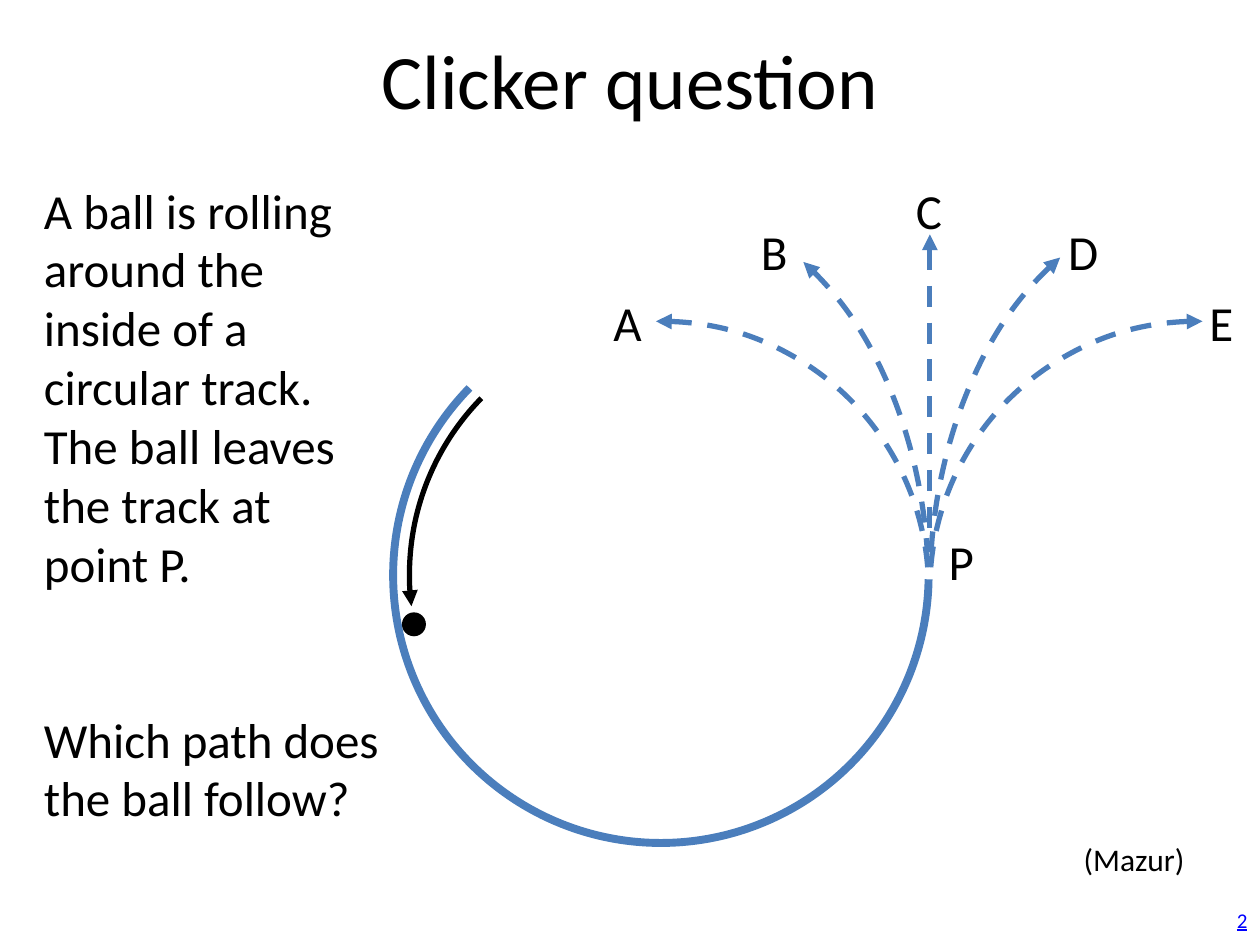
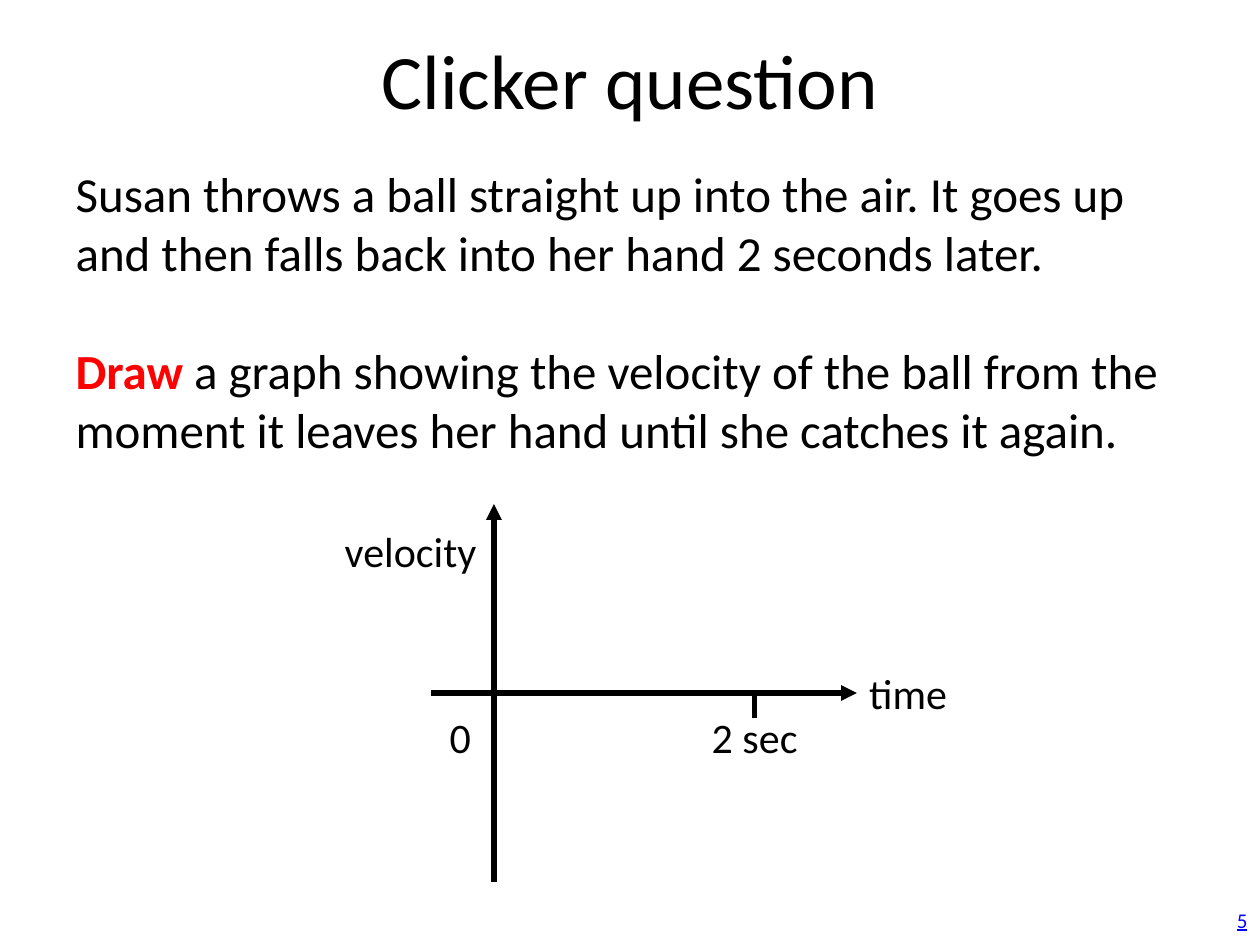
from pptx import Presentation
from pptx.dml.color import RGBColor
from pptx.enum.dml import MSO_LINE
from pptx.enum.shapes import MSO_CONNECTOR, MSO_SHAPE
from pptx.enum.text import MSO_ANCHOR, MSO_AUTO_SIZE, PP_ALIGN
from pptx.oxml.ns import qn
from pptx.util import Inches, Pt
from lxml import etree

LEFT, CENTER, RIGHT = PP_ALIGN.LEFT, PP_ALIGN.CENTER, PP_ALIGN.RIGHT
TOP, MIDDLE = MSO_ANCHOR.TOP, MSO_ANCHOR.MIDDLE
FIT, FIXED = MSO_AUTO_SIZE.SHAPE_TO_FIT_TEXT, MSO_AUTO_SIZE.NONE
ARC, OVAL = MSO_SHAPE.ARC, MSO_SHAPE.OVAL
STRAIGHT, DASH = MSO_CONNECTOR.STRAIGHT, MSO_LINE.DASH
TITLE_AND_BODY, TITLE_ONLY = 1, 5

FONT = "Calibri"
BLACK, BLUE, RED, LINK = "000000", "4B7EBC", "FF0000", "0000FF"
TRACK_LEFT, TRACK_SIZE = 3.12, 4.25
EXIT_X = 7.38
AXIS_Y, ORIGIN_X, TICK_X = 5.5, 3.92, 5.99


def color(hex_string):
    return RGBColor.from_string(hex_string)


def add_text(p, text, size=28, fill=BLACK, bold=False, underline=False, align=LEFT):
    p.alignment = align
    r = p.add_run()
    r.text = text
    r.font.name = FONT
    r.font.size = Pt(size)
    r.font.color.rgb = color(fill)
    r.font.bold = bold
    r.font.underline = underline


def place(sp, left, top, width, height):
    sp.left, sp.top = Inches(left), Inches(top)
    sp.width, sp.height = Inches(width), Inches(height)


def add_box(slide, box, text, wrap=True, anchor=TOP, **fmt):
    sp = slide.shapes.add_textbox(*map(Inches, box))
    tf = sp.text_frame
    tf.word_wrap = wrap
    tf.auto_size = FIXED if wrap else FIT
    tf.vertical_anchor = anchor
    add_text(tf.paragraphs[0], text, **fmt)
    return tf


def style_line(line, fill, width, dash=None, arrow=None):
    line.color.rgb = color(fill)
    line.width = Pt(width)
    if dash:
        line.dash_style = dash
    if arrow:
        ln = line._get_or_add_ln()
        etree.SubElement(ln, qn(f"a:{arrow}End")).set("type", "triangle")


def add_arc(slide, box, start, end, fill=BLUE, width=3, flip=False, **line):
    sp = slide.shapes.add_shape(ARC, *map(Inches, box))
    sp.shadow.inherit = False
    sp.fill.background()
    for i, degrees in enumerate((start, end)):
        sp.adjustments[i] = degrees * 0.6
    if flip:
        sp.element.spPr.find(qn("a:xfrm")).set("flipH", "1")
    style_line(sp.line, fill, width, **line)


def add_line(slide, x1, y1, x2, y2, fill=BLACK, **line):
    cxn = slide.shapes.add_connector(STRAIGHT, *map(Inches, (x1, y1, x2, y2)))
    style_line(cxn.line, fill, 3, **line)
    etree.SubElement(cxn.element.spPr, qn("a:effectLst"))


def add_ball(slide, left, top, size):
    sp = slide.shapes.add_shape(OVAL, *map(Inches, (left, top, size, size)))
    sp.shadow.inherit = False
    sp.fill.solid()
    sp.fill.fore_color.rgb = color(BLACK)
    sp.line.fill.background()


def add_question_slide(prs, layout, number):
    slide = prs.slides.add_slide(prs.slide_layouts[layout])
    title = slide.shapes.title
    place(title, 0.5, 0, 9, 1.25)
    title.text_frame.vertical_anchor = MIDDLE
    add_text(title.text_frame.paragraphs[0], "Clicker question", size=44, align=CENTER)
    add_box(slide, (7.67, 7.1, 2.33, 0.4), number, anchor=MIDDLE,
            size=12, fill=LINK, underline=True, align=RIGHT)
    return slide


def add_body(slide, paragraphs, gap):
    body = slide.placeholders[1]
    place(body, 0.5, 1.25, 9, 5.5)
    tf = body.text_frame
    tf.auto_size = FIXED
    for i, runs in enumerate(paragraphs):
        p = tf.add_paragraph() if i else tf.paragraphs[0]
        p.space_before = Pt(gap if i else 0)
        pPr = p._p.get_or_add_pPr()
        pPr.set("marL", "0")
        pPr.set("indent", "0")
        etree.SubElement(pPr, qn("a:buNone"))
        for text, fmt in runs:
            add_text(p, text, **fmt)


def build_track_slide(prs):
    slide = add_question_slide(prs, TITLE_ONLY, "2")
    tf = add_box(slide, (0.25, 1.38, 2.88, 5.3),
                 "A ball is rolling around the inside of a circular track. "
                 "The ball leaves the track at point P.")
    p = tf.add_paragraph()
    p.space_before = Pt(67)
    add_text(p, "Which path does the ball follow?")

    add_arc(slide, (TRACK_LEFT, 2.44, TRACK_SIZE, TRACK_SIZE), 0.88, 224.38, width=4.5)
    add_ball(slide, 3.19, 4.86, 0.19)
    paths = [
        (TRACK_LEFT, 2.55, TRACK_SIZE, 268.95, 358.52, False),
        (TRACK_LEFT, 1.61, 6.12, 293.59, 352.26, False),
        (EXIT_X, 1.61, 6.12, 292.56, 352.26, True),
        (EXIT_X, 2.55, TRACK_SIZE, 268.95, 356.85, True),
    ]
    for left, top, height, start, end, flip in paths:
        add_arc(slide, (left, top, TRACK_SIZE, height), start, end,
                flip=flip, dash=DASH, arrow="head")
    add_line(slide, EXIT_X, 1.86, EXIT_X, 4.33, fill=BLUE, dash=DASH, arrow="head")
    add_arc(slide, (3.25, 2.56, 4, 4), 172.77, 224.38, fill=BLACK, arrow="head")

    labels = [("P", 7.43, 4.17), ("A", 4.77, 2.27), ("B", 5.94, 1.71),
              ("C", 7.17, 1.38), ("D", 8.38, 1.71), ("E", 9.5, 2.27)]
    for letter, left, top in labels:
        add_box(slide, (left, top, 0.43, 0.57), letter)
    add_box(slide, (8.49, 6.62, 1.01, 0.4), "(Mazur)", wrap=False, size=18, align=RIGHT)


def build_velocity_slide(prs):
    slide = add_question_slide(prs, TITLE_AND_BODY, "5")
    add_body(slide, [
        [("Susan throws a ball straight up into the air. It goes up and then "
          "falls back into her hand 2 seconds later.", {})],
        [("Draw", {"fill": RED, "bold": True}),
         (" a graph showing the velocity of the ball from the moment it leaves "
          "her hand until she catches it again.", {})],
    ], gap=33.6)

    add_line(slide, 3.42, AXIS_Y, 6.8, AXIS_Y, arrow="tail")
    add_line(slide, ORIGIN_X, 7, ORIGIN_X, 4, arrow="tail")
    add_line(slide, TICK_X, AXIS_Y, TICK_X, AXIS_Y + 0.2)
    labels = [("time", 6.8, 5.25, 0.83, LEFT), ("velocity", 2.62, 4.12, 1.26, RIGHT),
              ("2 sec", 5.55, 5.6, 0.89, LEFT), ("0", 3.47, 5.6, 0.37, LEFT)]
    for text, left, top, width, align in labels:
        add_box(slide, (left, top, width, 0.5), text, wrap=False, size=24, align=align)


def main():
    prs = Presentation()
    prs.slide_width, prs.slide_height = Inches(10), Inches(7.5)
    build_track_slide(prs)
    build_velocity_slide(prs)
    prs.save("out.pptx")


if __name__ == "__main__":
    main()
